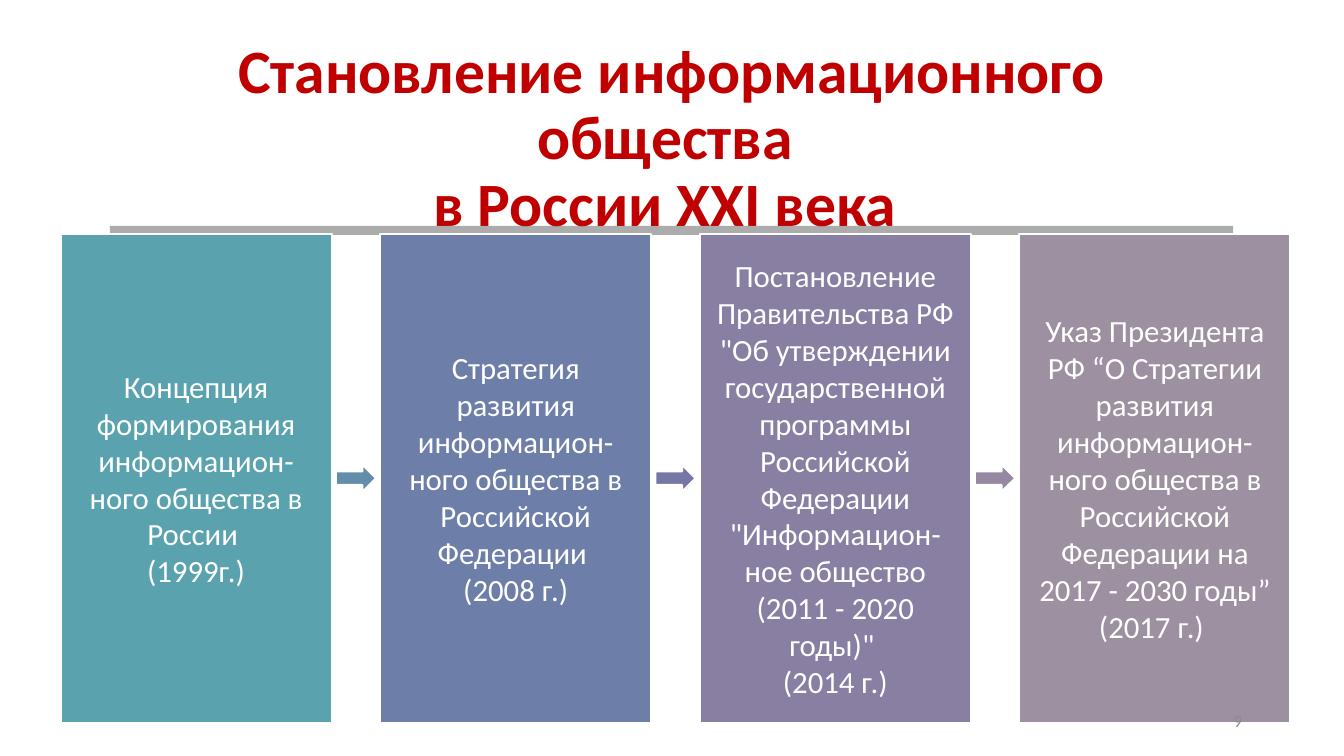
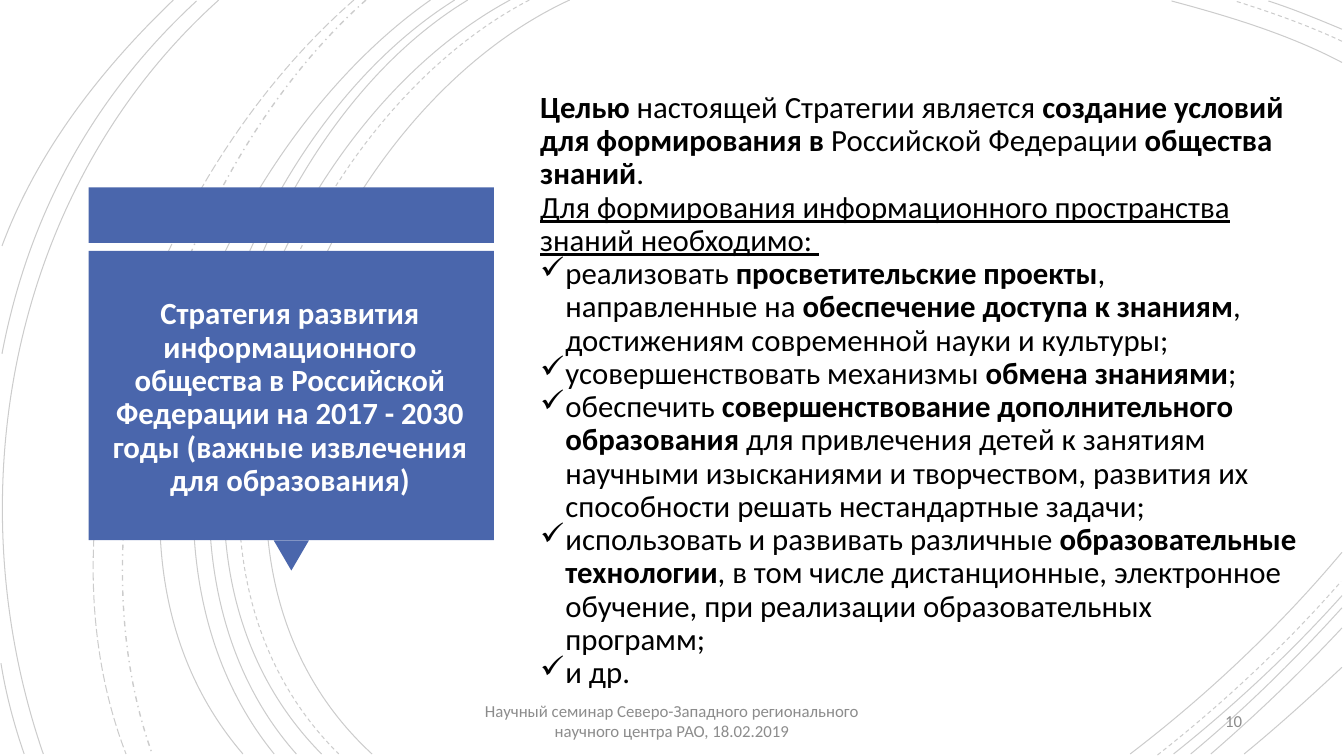
from dataclasses import dataclass
from typing import Any, NamedTuple, Optional

from lxml import etree
from pptx import Presentation
from pptx.dml.color import RGBColor
from pptx.enum.dml import MSO_LINE
from pptx.enum.shapes import MSO_SHAPE
from pptx.enum.text import MSO_ANCHOR, MSO_AUTO_SIZE, PP_ALIGN
from pptx.oxml.ns import qn
from pptx.util import Inches, Pt

RECT, ARROW, TRIANGLE = MSO_SHAPE.RECTANGLE, MSO_SHAPE.RIGHT_ARROW, MSO_SHAPE.ISOSCELES_TRIANGLE
LEFT, CENTER, RIGHT = PP_ALIGN.LEFT, PP_ALIGN.CENTER, PP_ALIGN.RIGHT
MIDDLE = MSO_ANCHOR.MIDDLE
SOLID, DASH, DASH_DOT, LONG_DASH = MSO_LINE.SOLID, MSO_LINE.DASH, MSO_LINE.DASH_DOT, MSO_LINE.LONG_DASH
SLIDE_W, SLIDE_H = Inches(13.33), Inches(7.5)
TITLE_ONLY = 5


@dataclass(frozen=True)
class Theme:
    font: str = "Calibri"
    heading: str = "C00000"
    white: str = "FFFFFF"
    black: str = "000000"
    muted: str = "8C8C8C"
    bar: str = "808080"
    panel: str = "4A66AC"
    heading_size: int = 44
    text_size: int = 22
    footer_size: int = 12
    bar_opacity: int = 65
    curve_opacity: int = 20
    tight: float = 0.9
    bullet: str = "✓"
    indent: float = 0.25
    step_inset: float = 0.17


THEME = Theme()


class Box(NamedTuple):
    """Left, top, width and height in percent of the slide's size."""
    x: float
    y: float
    w: float
    h: float

    def emu(self) -> tuple[int, int, int, int]:
        return (int(self.x * SLIDE_W / 100), int(self.y * SLIDE_H / 100),
                int(self.w * SLIDE_W / 100), int(self.h * SLIDE_H / 100))


@dataclass(frozen=True)
class TextStyle:
    size: int
    color: str
    align: Any = CENTER
    bold: bool = False
    spacing: float = 1.0
    inset: Optional[float] = None


class Para(NamedTuple):
    """Stars switch bold on and off; a line feed is a line break."""
    text: str
    bullet: bool = False
    underline: bool = False


class Step(NamedTuple):
    text: str
    year: str
    color: str
    arrow_color: Optional[str] = None


class Curve(NamedTuple):
    """A cubic curve, in inches: start, two control points, end."""
    points: tuple[tuple[float, float], ...]
    dash: Any = SOLID
    width: float = 0.75


HEADING = TextStyle(THEME.heading_size, THEME.heading, bold=True, spacing=THEME.tight)
PANEL_TITLE = TextStyle(THEME.text_size, THEME.white, bold=True, spacing=THEME.tight)
STEP_TEXT = TextStyle(THEME.text_size, THEME.white, inset=THEME.step_inset)
BODY = TextStyle(THEME.text_size, THEME.black, LEFT, spacing=THEME.tight)
FOOTER = TextStyle(THEME.footer_size, THEME.muted)
NUMBER = TextStyle(THEME.footer_size, THEME.muted, RIGHT)

# Places, in percent of the slide
HEADING_BOX = Box(7.13, 8.8, 85.75, 19.33)
BAR_BOX = Box(8.18, 29.87, 83.57, 1.2)
FIRST_STEP = Box(4.5, 30.93, 20.18, 64.67)
STEP_PITCH, ARROW_W, ARROW_H = 23.78, 3.0, 3.6
FOOTER_BOX = Box(33.12, 92.67, 33.75, 5.33)
NUMBER_BOX = Box(70.67, 92.67, 22.5, 5.33)
BAND = Box(6.6, 24.8, 30.15, 7.33)
PANEL = Box(6.6, 33.2, 30.15, 38.27)
POINTER_W, POINTER_H = 2.63, 4.0
PANEL_TITLE_BOX = Box(7.43, 35.2, 28.28, 34.93)
BODY_BOX = Box(39.46, 11.73, 57.76, 80)

STEPS = (
    Step("Концепция формирования информацион-ного общества в России ", "(1999г.)", "5AA2AE", "648DAB"),
    Step("Стратегия развития информацион-ного общества в Российской Федерации ", "(2008 г.)",
         "6D7FA8", "7677A6"),
    Step("Постановление Правительства РФ \"Об утверждении государственной программы Российской "
         "Федерации \"Информацион-ное общество (2011 - 2020 годы)\" ", "(2014 г.)", "887FA3", "9688A2"),
    Step("Указ Президента РФ “О Стратегии развития информацион-ного общества в Российской "
         "Федерации на 2017 - 2030 годы” ", "(2017 г.) ", "9D90A0"),
)

GOALS = (
    Para("*Целью* настоящей Стратегии является *создание условий для формирования в* "
         "Российской Федерации *общества знаний*."),
    Para("Для формирования информационного пространства знаний необходимо: ", underline=True),
    Para("реализовать *просветительские проекты*, направленные на *обеспечение доступа к знаниям*, "
         "достижениям современной науки и культуры;", bullet=True),
    Para("усовершенствовать механизмы *обмена знаниями*;", bullet=True),
    Para("обеспечить *совершенствование дополнительного образования *для привлечения детей к занятиям "
         "научными изысканиями и творчеством, развития их способности решать нестандартные задачи;",
         bullet=True),
    Para("использовать и развивать различные *образовательные технологии*, в том числе дистанционные, "
         "электронное обучение, при реализации образовательных программ;", bullet=True),
    Para("и др.", bullet=True),
)

CURVES = (
    # Long arcs on the left
    Curve(((5.65, 0), (3.15, 1.15), (1.43, 5.4), (3.69, 7.48))),
    Curve(((5.25, 0), (2.85, 1.25), (1.23, 5.37), (3.36, 7.48)), DASH),
    Curve(((5.06, 0), (2.7, 1.27), (1.1, 5.37), (3.19, 7.48))),
    Curve(((4.64, 0), (2.44, 1.33), (1.1, 5.41), (2.94, 7.48))),
    Curve(((4.51, 0), (2.31, 1.38), (0.97, 5.33), (2.72, 7.48))),
    Curve(((4.27, 0), (2.17, 1.47), (0.53, 5.29), (2.41, 7.48))),
    Curve(((3.63, 0), (1.76, 1.66), (0.65, 5.09), (1.51, 7.48)), DASH_DOT, 1),
    Curve(((3.51, 0), (1.57, 1.69), (0.29, 4.99), (1.25, 7.48)), LONG_DASH),
    Curve(((2.17, 0), (0.11, 1.85), (-0.46, 4.9), (0.43, 7.48))),
    Curve(((1.95, 0.01), (0.92, 0.96), (0.28, 2.14), (0.02, 3.51))),
    Curve(((0.01, 6.58), (0.06, 6.89), (0.14, 7.19), (0.24, 7.48))),
    Curve(((1.72, 0), (1, 0.69), (0.37, 1.5), (0.02, 2.44))),
    # Top right corner
    Curve(((13.31, 0.62), (12.78, 0.34), (12.18, 0.16), (11.62, 0.01))),
    Curve(((13.31, 0.41), (12.97, 0.25), (12.6, 0.12), (12.25, 0.01)), DASH),
    Curve(((13.31, 0.29), (13.07, 0.19), (12.83, 0.09), (12.58, 0.01))),
    # Bottom right corner
    Curve(((11.21, 7.48), (11.97, 6.9), (12.69, 6.22), (13.31, 5.48))),
    Curve(((11.48, 7.49), (12.13, 6.98), (12.75, 6.4), (13.3, 5.77)), DASH),
    Curve(((11.64, 7.48), (12.23, 7.01), (12.8, 6.48), (13.31, 5.91))),
    Curve(((11.81, 7.48), (12.34, 7.04), (12.84, 6.55), (13.31, 6.03))),
    Curve(((12.01, 7.48), (12.46, 7.09), (12.9, 6.67), (13.31, 6.23))),
    Curve(((12.34, 7.48), (12.67, 7.21), (12.99, 6.92), (13.31, 6.62))),
)


def assign(target: Any, values: dict[str, Any]) -> None:
    for name, value in values.items():
        setattr(target, name, value)


def set_opacity(owner: Any, percent: int) -> None:
    """Add transparency to the first solid colour below an XML element."""
    color = next(owner.iter(qn("a:srgbClr")))
    etree.SubElement(color, qn("a:alpha"), val=str(percent * 1000))


def add_bullet(paragraph: Any) -> None:
    indent = Inches(THEME.indent)
    props = paragraph._p.get_or_add_pPr()
    props.set("marL", str(indent))
    props.set("indent", str(-indent))
    etree.SubElement(props, qn("a:buChar"), char=THEME.bullet)


def write(frame: Any, paras: tuple[Para, ...], style: TextStyle) -> None:
    assign(frame, {"word_wrap": True, "auto_size": MSO_AUTO_SIZE.NONE, "vertical_anchor": MIDDLE})
    if style.inset is not None:
        sides = ("margin_left", "margin_top", "margin_right", "margin_bottom")
        assign(frame, dict.fromkeys(sides, Inches(style.inset)))
    for index, para in enumerate(paras):
        paragraph = frame.add_paragraph() if index else frame.paragraphs[0]
        assign(paragraph, {"alignment": style.align, "line_spacing": style.spacing,
                           "space_before": Pt(0), "space_after": Pt(0)})
        if para.bullet:
            add_bullet(paragraph)
        for line_index, line in enumerate(para.text.split("\n")):
            if line_index:
                paragraph.add_line_break()
            for part_index, part in enumerate(line.split("*")):
                if part:
                    run = paragraph.add_run()
                    run.text = part
                    assign(run.font, {"name": THEME.font, "size": Pt(style.size),
                                      "bold": style.bold or part_index % 2 == 1,
                                      "underline": para.underline})
                    run.font.color.rgb = RGBColor.from_string(style.color)


def add_block(slide: Any, kind: Any, box: Box, color: str, outlined: bool = False) -> Any:
    block = slide.shapes.add_shape(kind, *box.emu())
    block.shadow.inherit = False
    block.fill.solid()
    block.fill.fore_color.rgb = RGBColor.from_string(color)
    if outlined:
        block.line.color.rgb = RGBColor.from_string(THEME.white)
        block.line.width = Pt(1.5)
    else:
        block.line.fill.background()
    return block


def add_text(slide: Any, box: Box, paras: tuple[Para, ...], style: TextStyle) -> None:
    write(slide.shapes.add_textbox(*box.emu()).text_frame, paras, style)


def add_title(slide: Any, box: Box, text: str, style: TextStyle) -> None:
    title = slide.shapes.title
    assign(title, dict(zip(("left", "top", "width", "height"), box.emu())))
    write(title.text_frame, (Para(text),), style)


def add_number(slide: Any, number: int) -> None:
    add_text(slide, NUMBER_BOX, (Para(str(number)),), NUMBER)


def add_curve(slide: Any, curve: Curve) -> None:
    vertices = [(Inches(x), Inches(y)) for x, y in curve.points]
    builder = slide.shapes.build_freeform(*vertices[0], scale=1.0)
    builder.add_line_segments(vertices[1:], close=False)
    arc = builder.convert_to_shape()
    # Join the three segments into one cubic curve
    outline = next(arc._element.iter(qn("a:path")))
    bend = etree.SubElement(outline, qn("a:cubicBezTo"))
    for segment in outline.findall(qn("a:lnTo")):
        bend.append(segment[0])
        outline.remove(segment)
    arc.shadow.inherit = False
    arc.fill.background()
    arc.line.color.rgb = RGBColor.from_string(THEME.black)
    assign(arc.line, {"width": Pt(curve.width), "dash_style": curve.dash})
    set_opacity(arc.line._ln, THEME.curve_opacity)


def build_timeline(slide: Any) -> None:
    add_title(slide, HEADING_BOX, "Становление информационного общества \nв России ХХI века ", HEADING)
    bar = add_block(slide, RECT, BAR_BOX, THEME.bar)
    set_opacity(bar.fill._xPr, THEME.bar_opacity)
    # Steps, with an arrow centred in each gap
    gap = STEP_PITCH - FIRST_STEP.w
    for column, step in enumerate(STEPS):
        box = FIRST_STEP._replace(x=FIRST_STEP.x + column * STEP_PITCH)
        card = add_block(slide, RECT, box, step.color, outlined=True)
        write(card.text_frame, (Para(step.text), Para(step.year)), STEP_TEXT)
        if step.arrow_color:
            arrow_box = Box(box.x + box.w + (gap - ARROW_W) / 2, box.y + (box.h - ARROW_H) / 2,
                            ARROW_W, ARROW_H)
            add_block(slide, ARROW, arrow_box, step.arrow_color, outlined=True)
    add_number(slide, 9)


def build_strategy(slide: Any) -> None:
    for curve in CURVES:
        add_curve(slide, curve)
    # Panel with its band and pointer
    pointer_box = Box(PANEL.x + (PANEL.w - POINTER_W) / 2, PANEL.y + PANEL.h, POINTER_W, POINTER_H)
    add_block(slide, RECT, BAND, THEME.panel)
    add_block(slide, TRIANGLE, pointer_box, THEME.panel).rotation = 180
    add_block(slide, RECT, PANEL, THEME.panel)
    # The title lies on top of the panel
    slide.shapes._spTree.append(slide.shapes.title._element)
    add_title(slide, PANEL_TITLE_BOX, "Стратегия развития информационного общества в Российской "
              "Федерации на 2017 - 2030 годы (важные извлечения для образования)", PANEL_TITLE)
    add_text(slide, BODY_BOX, GOALS, BODY)
    add_text(slide, FOOTER_BOX, (Para("Научный семинар Северо-Западного регионального "
                                      "научного центра РАО, 18.02.2019"),), FOOTER)
    add_number(slide, 10)


def main() -> None:
    deck = Presentation()
    assign(deck, {"slide_width": SLIDE_W, "slide_height": SLIDE_H})
    for build in (build_timeline, build_strategy):
        build(deck.slides.add_slide(deck.slide_layouts[TITLE_ONLY]))
    deck.save("out.pptx")


if __name__ == "__main__":
    main()
